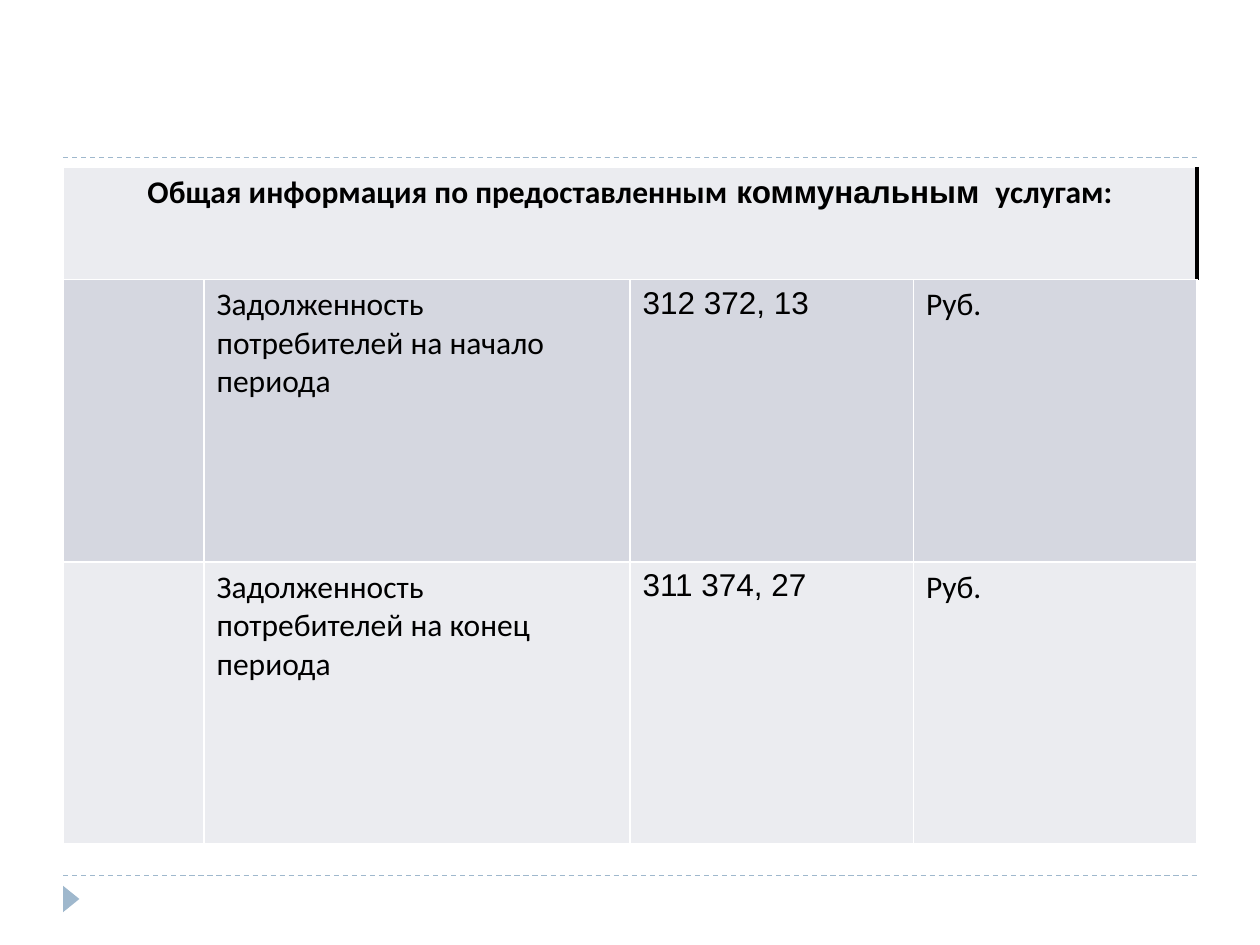
from lxml.etree import SubElement
from pptx import Presentation
from pptx.dml.color import RGBColor
from pptx.enum.dml import MSO_LINE
from pptx.enum.shapes import MSO_CONNECTOR, MSO_SHAPE
from pptx.enum.text import PP_ALIGN
from pptx.oxml.ns import qn
from pptx.util import Inches, Pt

ACCENT = RGBColor(0x9F, 0xB8, 0xCD)
LIGHT = RGBColor(0xEB, 0xEC, 0xF0)
DARK = RGBColor(0xD5, 0xD7, 0xE0)
BLACK = RGBColor(0, 0, 0)
WHITE = RGBColor(255, 255, 255)

COL_WIDTHS = [1.12, 3.38, 2.25, 2.25]
ROW_HEIGHTS = [0.89, 2.24, 2.24]
HEADING = [
    (" Общая информация по предоставленным", "Calibri"),
    (" коммунальным ", "Arial"),
    (" услугам: ", "Calibri"),
]
DEBTS = [
    ("Задолженность потребителей на начало периода", "312 372, 13", "Руб."),
    ("Задолженность потребителей на конец периода", "311 374, 27", "Руб."),
]


def add_dashed_rule(s, y):
    """Draw a dashed line across the slide at height y."""
    line = s.shapes.add_connector(
        MSO_CONNECTOR.STRAIGHT, Inches(0.5), Inches(y), Inches(9.5), Inches(y))
    line.line.color.rgb = ACCENT
    line.line.width = Pt(0.75)
    line.line.dash_style = MSO_LINE.DASH
    SubElement(line._element.spPr, qn("a:effectLst"))


def add_marker(s):
    """Add the triangle that points right in the footer."""
    sp = s.shapes.add_shape(MSO_SHAPE.ISOSCELES_TRIANGLE,
                            Inches(0.46), Inches(7.07), Inches(0.21), Inches(0.13))
    sp.rotation = 90
    sp.shadow.inherit = False
    sp.fill.solid()
    sp.fill.fore_color.rgb = ACCENT
    sp.line.fill.background()


def style_cell(cell, fill, right=(WHITE, 1)):
    """Give a cell its four borders and then its fill."""
    tcPr = cell._tc.get_or_add_tcPr()
    for side in "LRTB":
        color, width = right if side == "R" else (WHITE, 1)
        ln = SubElement(tcPr, qn(f"a:ln{side}"), w=str(Pt(width)))
        solid = SubElement(ln, qn("a:solidFill"))
        SubElement(solid, qn("a:srgbClr"), val=str(color))
    cell.fill.solid()
    cell.fill.fore_color.rgb = fill


def write_cell(cell, runs, bold=False, align=PP_ALIGN.LEFT):
    """Write (text, font name) runs into a cell."""
    p = cell.text_frame.paragraphs[0]
    p.alignment = align
    for text, name in runs:
        r = p.add_run()
        r.text = text
        r.font.name = name
        r.font.size = Pt(18)
        r.font.bold = bold
        r.font.color.rgb = BLACK


def add_debt_table(s):
    """Add the table of debts under a merged heading row."""
    table = s.shapes.add_table(
        len(ROW_HEIGHTS), len(COL_WIDTHS), Inches(0.5), Inches(1.33),
        Inches(9), Inches(sum(ROW_HEIGHTS))).table
    for column, width in zip(table.columns, COL_WIDTHS):
        column.width = Inches(width)
    for row, height in zip(table.rows, ROW_HEIGHTS):
        row.height = Inches(height)

    heading = table.cell(0, 0)
    heading.merge(table.cell(0, len(COL_WIDTHS) - 1))
    for cell in table.rows[0].cells:
        style_cell(cell, LIGHT, right=(BLACK, 2.25))
    write_cell(heading, HEADING, bold=True, align=PP_ALIGN.CENTER)

    for i, (debt, fill) in enumerate(zip(DEBTS, (DARK, LIGHT)), start=1):
        for cell in table.rows[i].cells:
            style_cell(cell, fill)
        for j, (text, name) in enumerate(zip(debt, ("Calibri", "Arial", "Calibri")), start=1):
            write_cell(table.cell(i, j), [(text, name)])


def main():
    """Build the slide and save it."""
    prs = Presentation()
    prs.slide_width, prs.slide_height = Inches(10), Inches(7.5)
    s = prs.slides.add_slide(prs.slide_layouts[6])
    for y in (6.95, 1.25):
        add_dashed_rule(s, y)
    add_marker(s)
    add_debt_table(s)
    prs.save("out.pptx")


if __name__ == "__main__":
    main()
